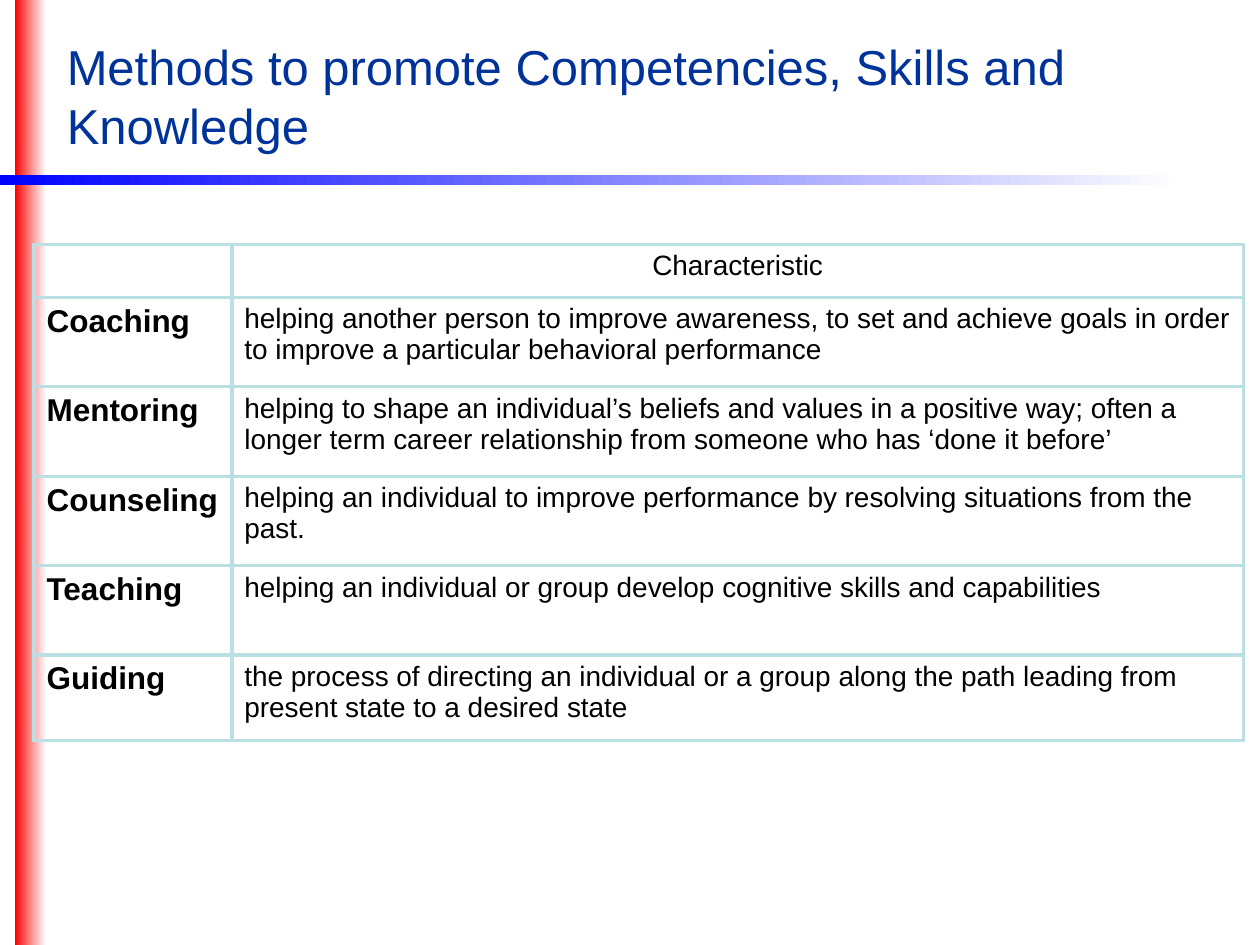
from dataclasses import dataclass

from lxml import etree
from pptx import Presentation
from pptx import util as u
from pptx.dml.color import RGBColor
from pptx.enum import shapes, text
from pptx.oxml.ns import qn


@dataclass(frozen=True)
class Theme:
    font: str = "Arial"
    title: RGBColor = RGBColor(0x00, 0x33, 0x99)
    ink: RGBColor = RGBColor(0x00, 0x00, 0x00)
    white: RGBColor = RGBColor(0xFF, 0xFF, 0xFF)
    border: RGBColor = RGBColor(0xBB, 0xE0, 0xE3)
    border_width: float = 2.25
    title_size: int = 28
    method_size: int = 18
    text_size: int = 16


@dataclass(frozen=True)
class Band:
    left: float
    top: float
    width: float
    height: float
    color: RGBColor
    end_alpha: int = 100


@dataclass(frozen=True)
class Method:
    name: str
    characteristic: str


THEME = Theme()
BANDS = [
    Band(0.12, 0, 0.24, 7.5, RGBColor(0xFF, 0x00, 0x00), 84),
    Band(0, 1.39, 9.41, 0.08, RGBColor(0x00, 0x00, 0xFF)),
]
METHODS = [
    Method("Coaching", "helping another person to improve awareness, to set and achieve "
           "goals in order to improve a particular behavioral performance"),
    Method("Mentoring", "helping to shape an individual’s beliefs and values in a positive way; "
           "often a longer term career relationship from someone who has ‘done it before’"),
    Method("Counseling", "helping an individual to improve performance by resolving "
           "situations from the past."),
    Method("Teaching", "helping an individual or group develop cognitive skills and capabilities"),
    Method("Guiding", "the process of directing an individual or a group along the path "
           "leading from present state to a desired state"),
]
COLUMN_WIDTHS = [1.57, 8.03]
ROW_HEIGHTS = [0.42, 0.71, 0.71, 0.71, 0.71, 0.68]


def style_paragraph(para, size: int, color: RGBColor, bold: bool = False) -> None:
    para.font.name = THEME.font
    para.font.size = u.Pt(size)
    para.font.bold = bold
    para.font.color.rgb = color


def draw_band(page, band: Band) -> None:
    box = page.shapes.add_shape(
        shapes.MSO_SHAPE.RECTANGLE, u.Inches(band.left), u.Inches(band.top),
        u.Inches(band.width), u.Inches(band.height))
    box.shadow.inherit = False
    box.line.fill.background()
    box.fill.gradient()
    box.fill.gradient_angle = 0
    start, end = box.fill.gradient_stops
    start.color.rgb = band.color
    end.color.rgb = THEME.white
    if band.end_alpha < 100:
        last_color = list(box.fill._xPr.iter(qn("a:srgbClr")))[-1]
        etree.SubElement(last_color, qn("a:alpha"), val=str(band.end_alpha * 1000))


def draw_borders(cell) -> None:
    properties = cell._tc.get_or_add_tcPr()
    for index, side in enumerate(("lnL", "lnR", "lnT", "lnB")):
        line = etree.Element(qn(f"a:{side}"), w=str(u.Pt(THEME.border_width)))
        fill = etree.SubElement(line, qn("a:solidFill"))
        etree.SubElement(fill, qn("a:srgbClr"), val=str(THEME.border))
        properties.insert(index, line)


def fill_cell(cell, wording: str, size: int, bold: bool = False) -> None:
    cell.fill.background()
    draw_borders(cell)
    if wording:
        cell.text = wording
        style_paragraph(cell.text_frame.paragraphs[0], size, THEME.ink, bold)


def draw_title(page, wording: str) -> None:
    title = page.shapes.title
    title.left, title.top = u.Inches(0.43), u.Inches(0.29)
    title.width, title.height = u.Inches(8.9), u.Inches(0.94)
    frame = title.text_frame
    frame.text = wording
    frame.word_wrap = True
    frame.auto_size = text.MSO_AUTO_SIZE.NONE
    frame.vertical_anchor = text.MSO_ANCHOR.MIDDLE
    para = frame.paragraphs[0]
    para.alignment = text.PP_ALIGN.LEFT
    style_paragraph(para, THEME.title_size, THEME.title)


def draw_methods(page, methods: list[Method]) -> None:
    table = page.shapes.add_table(
        len(methods) + 1, len(COLUMN_WIDTHS), u.Inches(0.27), u.Inches(1.94),
        u.Inches(sum(COLUMN_WIDTHS)), u.Inches(sum(ROW_HEIGHTS))).table
    table.first_row = table.horz_banding = False
    for column, width in zip(table.columns, COLUMN_WIDTHS):
        column.width = u.Inches(width)
    for row, height in zip(table.rows, ROW_HEIGHTS):
        row.height = u.Inches(height)

    # Header row, then one row per method
    for row, method in enumerate([Method("", "Characteristic"), *methods]):
        fill_cell(table.cell(row, 0), method.name, THEME.method_size, bold=True)
        fill_cell(table.cell(row, 1), method.characteristic, THEME.text_size)
    header = table.cell(0, 1).text_frame.paragraphs[0]
    header.alignment = text.PP_ALIGN.CENTER


def main() -> None:
    deck = Presentation()
    deck.slide_width, deck.slide_height = u.Inches(10), u.Inches(7.5)
    page = deck.slides.add_slide(deck.slide_layouts.get_by_name("Title Only"))
    for band in BANDS:
        draw_band(page, band)
    draw_title(page, "Methods to promote Competencies, Skills and Knowledge")
    draw_methods(page, METHODS)
    deck.save("out.pptx")


if __name__ == "__main__":
    main()
